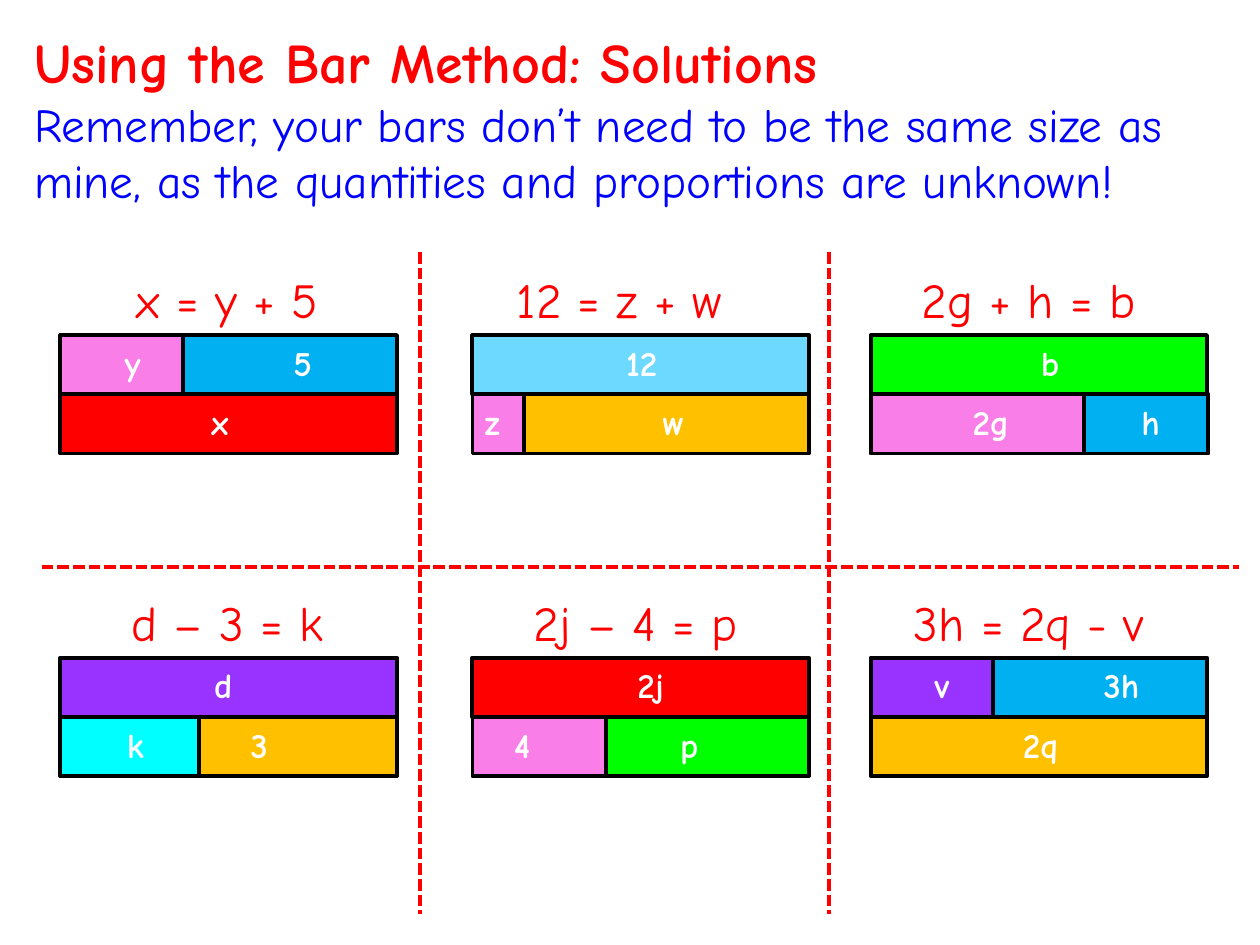
from typing import NamedTuple

from lxml import etree
from pptx import Presentation
from pptx import util as u
from pptx.dml import color
from pptx.enum import dml, shapes, text
from pptx.oxml import ns

FONT = "Comic Neue"
COLOURS = {
    "red": "FF0000", "blue": "0000FF", "black": "000000", "white": "FFFFFF",
    "pink": "FA7EE8", "azure": "00B0F0", "sky": "6DD9FF", "gold": "FFC000",
    "green": "00FF00", "cyan": "00FFFF", "purple": "9933FF",
}
LEFT, CENTRE = text.PP_ALIGN.LEFT, text.PP_ALIGN.CENTER
BAR_WIDTH, BAR_HEIGHT = 2.67, 0.47
EQUATION_HEIGHT = 0.57
LABEL_WIDTH, LABEL_HEIGHT = 0.71, 0.44
COLUMNS = (0.48, 3.75, 6.91)
ROWS = (2.66, 5.22)


class Bar(NamedTuple):
    label: str
    fill: str
    left: float
    row: int
    width: float
    label_left: float
    align: text.PP_ALIGN = LEFT


class Panel(NamedTuple):
    equation: str
    equation_shift: float
    bars: tuple


PANELS = (
    Panel("x = y + 5", -0.01, (
        Bar("5", "azure", 0.95, 0, 1.72, 1.75),
        Bar("y", "pink", 0, 0, 0.97, 0.41),
        Bar("x", "red", 0, 1, BAR_WIDTH, 1.1))),
    Panel("12 = z + w", -0.17, (
        Bar("w", "gold", 0.41, 1, 2.26, 1.41),
        Bar("z", "pink", 0, 1, 0.41, 0),
        Bar("12", "sky", 0, 0, BAR_WIDTH, 1.12))),
    Panel("2g + h = b", -0.08, (
        Bar("h", "azure", 1.34, 1, 1.34, 2.05),
        Bar("2g", "pink", 0, 1, 1.69, 0.71),
        Bar("b", "green", 0, 0, BAR_WIDTH, 1.07, CENTRE))),
    Panel("d – 3 = k", -0.01, (
        Bar("3", "gold", 0.41, 1, 2.26, 1.41),
        Bar("k", "cyan", 0, 1, 1.1, 0.24, CENTRE),
        Bar("d", "purple", 0, 0, BAR_WIDTH, 1.12))),
    Panel("2j – 4 = p", -0.04, (
        Bar("4", "pink", 0, 1, 1.69, 0.23),
        Bar("2j", "red", 0, 0, BAR_WIDTH, 1.06, CENTRE),
        Bar("p", "green", 1.06, 1, 1.61, 1.55))),
    Panel("3h = 2q - v", -0.08, (
        Bar("3h", "azure", 0.95, 0, 1.72, 1.75),
        Bar("v", "purple", 0, 0, 0.97, 0.41),
        Bar("2q", "gold", 0, 1, BAR_WIDTH, 1.11))),
)


def rgb(name):
    return color.RGBColor.from_string(COLOURS[name])


def inches(*lengths):
    return [u.Inches(length) for length in lengths]


def add_span(para, words, size, colour, bold=False, align=LEFT):
    para.alignment = align
    span = para.add_run()
    span.text = words
    span.font.name = FONT
    span.font.size = u.Pt(size)
    span.font.bold = bold
    span.font.color.rgb = rgb(colour)


def add_words(page, place, words, size, colour, bold, align):
    box = page.shapes.add_textbox(*inches(*place))
    box.text_frame.word_wrap = True
    box.text_frame.auto_size = text.MSO_AUTO_SIZE.SHAPE_TO_FIT_TEXT
    add_span(box.text_frame.paragraphs[0], words, size, colour, bold, align)


def add_heading(page, left, top, width, height):
    box = page.shapes.title
    box.left, box.top, box.width, box.height = inches(left, top, width, height)
    frame = box.text_frame
    frame.word_wrap = True
    frame.auto_size = text.MSO_AUTO_SIZE.SHAPE_TO_FIT_TEXT
    frame.vertical_anchor = text.MSO_ANCHOR.TOP
    add_span(frame.paragraphs[0], "Using the Bar Method: Solutions", 32, "red", True)
    add_span(frame.add_paragraph(),
             "Remember, your bars don’t need to be the same size as mine, "
             "as the quantities and proportions are unknown!", 27, "blue")


def add_dividers(page, left, top, width, height):
    right, bottom = left + width, top + height
    lines = [(x, top, x, bottom) for x in (3.33, 6.58)]
    lines.append((left, 4.5, right, 4.5))
    for ends in lines:
        divider = page.shapes.add_connector(shapes.MSO_CONNECTOR.STRAIGHT, *inches(*ends))
        divider.line.color.rgb = rgb("red")
        divider.line.width = u.Pt(2.25)
        divider.line.dash_style = dml.MSO_LINE.SQUARE_DOT
        etree.SubElement(divider.element.spPr, ns.qn("a:effectLst"))


def add_panel(page, panel, left, top):
    add_words(page, (left + panel.equation_shift, top - EQUATION_HEIGHT,
                     BAR_WIDTH, EQUATION_HEIGHT),
              panel.equation, 28, "red", False, CENTRE)
    for bar in panel.bars:
        box = page.shapes.add_shape(
            shapes.MSO_SHAPE.RECTANGLE,
            *inches(left + bar.left, top + bar.row * BAR_HEIGHT, bar.width, BAR_HEIGHT))
        box.shadow.inherit = False
        box.fill.solid()
        box.fill.fore_color.rgb = rgb(bar.fill)
        box.line.color.rgb = rgb("black")
        box.line.width = u.Pt(2.25)
    for bar in panel.bars:
        add_words(page, (left + bar.label_left, top + bar.row * BAR_HEIGHT,
                         LABEL_WIDTH, LABEL_HEIGHT),
                  bar.label, 20, "white", True, bar.align)


def main():
    deck = Presentation()
    deck.slide_width, deck.slide_height = inches(10, 7.5)
    page = deck.slides.add_slide(deck.slide_layouts.get_by_name("Title Only"))
    add_heading(page, 0.17, 0.17, 9.83, 1.55)
    add_dividers(page, 0.33, 2, 9.5, 5.25)
    for index, panel in enumerate(PANELS):
        row, column = divmod(index, len(COLUMNS))
        add_panel(page, panel, COLUMNS[column], ROWS[row])
    deck.save("out.pptx")


if __name__ == "__main__":
    main()
